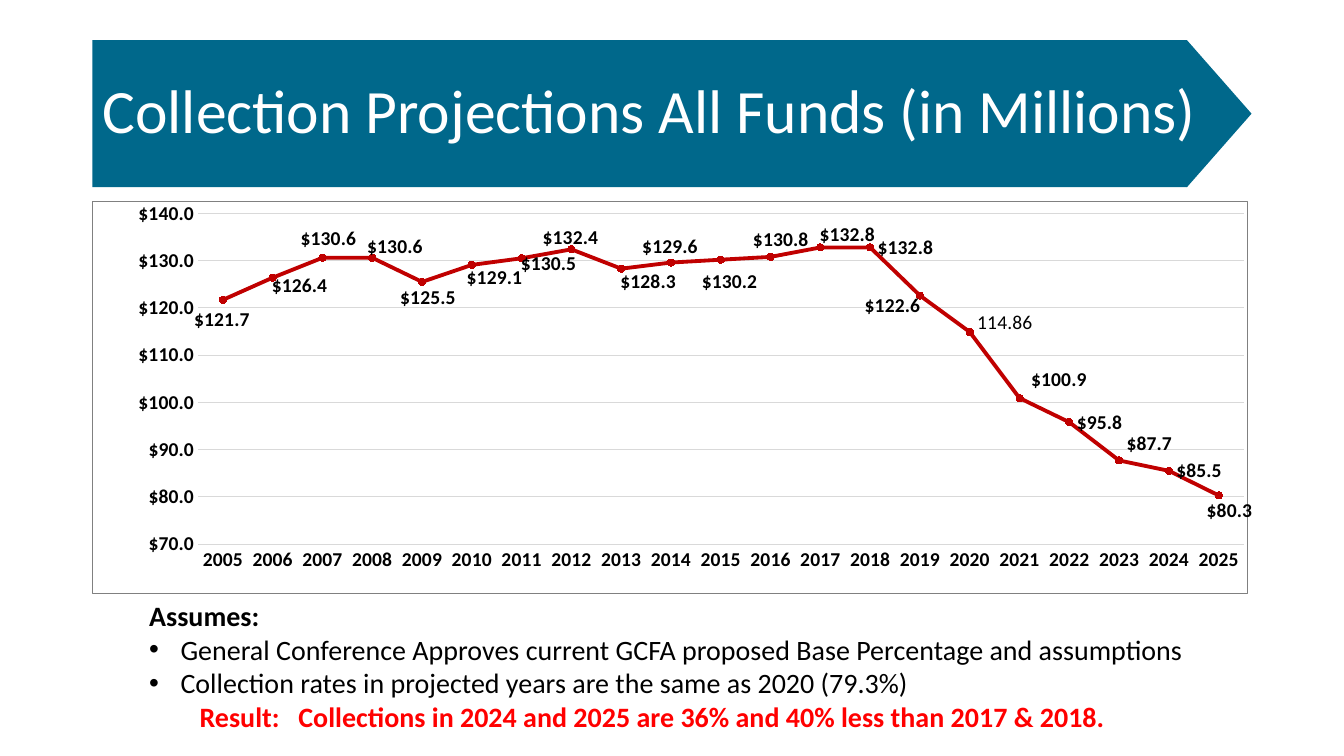
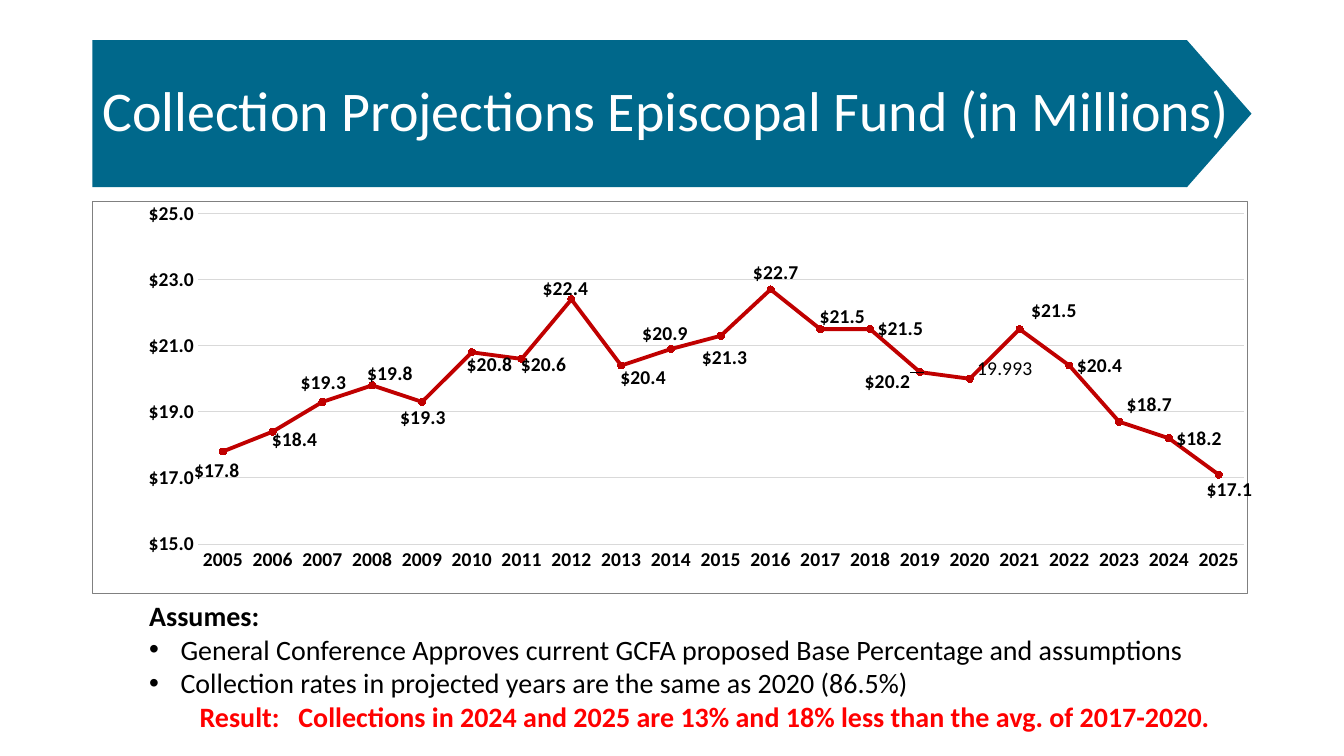
"""Build the two collection projection slides."""
import pptx
import pptx.chart.data
import pptx.dml.color
import pptx.enum.chart
import pptx.enum.shapes
import pptx.enum.text
import pptx.oxml
import pptx.oxml.ns
import pptx.util

Cm = pptx.util.Cm
Pt = pptx.util.Pt

COLORS = {"banner": "00688B", "paper": "FFFFFF", "ink": "000000", "collections": "C00000",
          "grid": "D9D9D9", "frame": "808080", "result": "FF0000"}
FONT = "Calibri"
LEFT, TOP, WIDTH = Cm(2.33), Cm(1.01), Cm(29.23)
CHART_WIDTH_PT, CHART_HEIGHT_PT = 828, 280
PLOT_PERCENT = {"x": 9.1, "y": 3.1, "w": 90.6, "h": 84.4}
YEARS = [str(year) for year in range(2005, 2026)]
DOLLARS = '"$"#,##0.0'
LABEL_SHIFTS_PT = {
    0: (-26, 14), 1: (-6, 6), 2: (-21, -14), 3: (-9, -8), 4: (-21, 11), 5: (-9, 9),
    6: (-6, 4), 7: (-26, -8), 8: (-6, 9), 9: (-26, -11), 10: (-19, 16), 11: (-18, -12),
    12: (-6, -9), 14: (-45, 7), 15: (0, -7), 16: (3, -13), 18: (0, -12), 20: (-14, 11),
}
PLAIN_YEAR = YEARS.index("2020")

PROJECTIONS = [
    {
        "title": "Collection Projections All Funds (in Millions)", "title_size": 44,
        "values": [121.7, 126.4, 130.6, 130.6, 125.5, 129.1, 130.5, 132.4, 128.3, 129.6, 130.2,
                   130.8, 132.8, 132.8, 122.6, 114.9, 100.9, 95.8, 87.7, 85.5, 80.3],
        "plain_label": "114.86",
        "scale": {"minimum_scale": 70, "maximum_scale": 140, "major_unit": 10},
        "rate": "79.3%",
        "result": "Collections in 2024 and 2025 are 36% and 40% less than 2017 & 2018.",
    },
    {
        "title": "Collection Projections Episcopal Fund (in Millions)", "title_size": 40,
        "values": [17.8, 18.4, 19.3, 19.8, 19.3, 20.8, 20.6, 22.4, 20.4, 20.9, 21.3,
                   22.7, 21.5, 21.5, 20.2, 20.0, 21.5, 20.4, 18.7, 18.2, 17.1],
        "plain_label": "19.993",
        "scale": {"minimum_scale": 15, "maximum_scale": 25, "major_unit": 2},
        "rate": "86.5%",
        "result": "Collections in 2024 and 2025 are 13% and 18% less than the avg. of 2017-2020.",
    },
]


def rgb(name):
    """Return the named colour."""
    return pptx.dml.color.RGBColor.from_string(COLORS[name])


def apply(target, **values):
    """Set each given attribute on the target."""
    for name, value in values.items():
        setattr(target, name, value)


def xml(body):
    """Parse a fragment with the chart and drawing namespaces."""
    tag, rest = body.split(">", 1)
    return pptx.oxml.parse_xml(f"{tag} {pptx.oxml.ns.nsdecls('c', 'a')}>{rest}")


class Deck:
    """Hold the shared style and the current slide."""

    def __init__(self):
        """Start an empty wide presentation."""
        self.presentation = pptx.Presentation()
        apply(self.presentation, slide_width=Cm(33.87), slide_height=Cm(19.05))
        self.slide = None

    def font(self, font, size, color="ink", bold=False):
        """Style a font."""
        apply(font, name=FONT, size=Pt(size), bold=bold)
        font.color.rgb = rgb(color)

    def line(self, line, color, width):
        """Style a line."""
        line.color.rgb = rgb(color)
        line.width = Pt(width)

    def add_slide(self, title, size):
        """Add a slide with its banner and title."""
        self.slide = self.presentation.slides.add_slide(self.presentation.slide_layouts[5])
        heading = self.slide.shapes.title
        kinds = pptx.enum.shapes.MSO_SHAPE
        for kind, box, turn in [
            (kinds.RECTANGLE, (LEFT, TOP, Cm(27.58), Cm(3.71)), 0),
            (kinds.ISOSCELES_TRIANGLE, (Cm(28.87), Cm(2.05), Cm(3.71), Cm(1.63)), 90),
        ]:
            banner = self.slide.shapes.add_shape(kind, *box)
            banner.rotation = turn
            banner.shadow.inherit = False
            banner.fill.solid()
            banner.fill.fore_color.rgb = rgb("banner")
            banner.line.fill.background()
            heading.element.addprevious(banner.element)
        apply(heading, left=LEFT, top=TOP, width=WIDTH, height=Cm(3.68))
        apply(heading.text_frame, text=title, word_wrap=True,
              auto_size=pptx.enum.text.MSO_AUTO_SIZE.NONE,
              vertical_anchor=pptx.enum.text.MSO_ANCHOR.MIDDLE)
        paragraph = heading.text_frame.paragraphs[0]
        apply(paragraph, alignment=pptx.enum.text.PP_ALIGN.LEFT, line_spacing=0.9)
        self.font(paragraph.runs[0].font, size, "paper")

    def add_projection(self, values, plain_label, scale):
        """Add the line chart of yearly collections."""
        data = pptx.chart.data.CategoryChartData(number_format=DOLLARS)
        data.categories = YEARS
        data.add_series("Series 1", values)
        chart = self.slide.shapes.add_chart(
            pptx.enum.chart.XL_CHART_TYPE.LINE_MARKERS, LEFT, Cm(5.06), WIDTH, Cm(9.9), data).chart
        apply(chart, has_legend=False, has_title=False)
        self.font(chart.font, 10, bold=True)
        chart.plots[0].vary_by_categories = False
        self.frame(chart)
        self.axes(chart, scale)
        series = chart.plots[0].series[0]
        series.smooth = False
        self.line(series.format.line, "collections", 2.75)
        apply(series.marker, style=pptx.enum.chart.XL_MARKER_STYLE.CIRCLE, size=5)
        series.marker.format.fill.solid()
        series.marker.format.fill.fore_color.rgb = rgb("collections")
        self.line(series.marker.format.line, "collections", 0.75)
        self.labels(chart, series, plain_label)

    def frame(self, chart):
        """Fill and outline the chart area and place its plot."""
        chart.element.find(pptx.oxml.ns.qn("c:chart")).addnext(xml(
            f'<c:spPr><a:solidFill><a:srgbClr val="{COLORS["paper"]}"/></a:solidFill>'
            f'<a:ln w="{Pt(0.75)}"><a:solidFill><a:srgbClr val="{COLORS["frame"]}"/>'
            '</a:solidFill></a:ln></c:spPr>'))
        plot_area = chart.element.xpath(".//c:plotArea")[0]
        for layout in plot_area.findall(pptx.oxml.ns.qn("c:layout")):
            plot_area.remove(layout)
        sizes = "".join(f'<c:{side} val="{share / 100:.3f}"/>' for side, share in PLOT_PERCENT.items())
        plot_area.insert(0, xml(
            '<c:layout><c:manualLayout><c:layoutTarget val="inner"/><c:xMode val="edge"/>'
            f'<c:yMode val="edge"/>{sizes}</c:manualLayout></c:layout>'))

    def axes(self, chart, scale):
        """Style both axes and the grid."""
        no_tick = pptx.enum.chart.XL_TICK_MARK.NONE
        for axis in (chart.category_axis, chart.value_axis):
            apply(axis, major_tick_mark=no_tick, minor_tick_mark=no_tick)
            self.font(axis.tick_labels.font, 14, bold=True)
        self.line(chart.category_axis.format.line, "grid", 0.75)
        amounts = chart.value_axis
        apply(amounts, has_major_gridlines=True, **scale)
        apply(amounts.tick_labels, number_format=DOLLARS, number_format_is_linked=False)
        amounts.format.line.fill.background()
        self.line(amounts.major_gridlines.format.line, "grid", 0.75)

    def labels(self, chart, series, plain_label):
        """Show the values and shift the crowded ones."""
        right = pptx.enum.chart.XL_LABEL_POSITION.RIGHT
        apply(series.data_labels, show_value=True, position=right,
              number_format=DOLLARS, number_format_is_linked=False)
        self.font(series.data_labels.font, 14, bold=True)
        for index in LABEL_SHIFTS_PT:
            label = series.points[index].data_label
            if index == PLAIN_YEAR:
                label.text_frame.text = plain_label
                self.font(label.text_frame.paragraphs[0].runs[0].font, 14)
            else:
                self.font(label.font, 14, bold=True)
            label.position = right
        for element, (across, down) in zip(chart.element.xpath(".//c:dLbl"), LABEL_SHIFTS_PT.values()):
            element.find(pptx.oxml.ns.qn("c:idx")).addnext(xml(
                f'<c:layout><c:manualLayout><c:x val="{across / CHART_WIDTH_PT:.4f}"/>'
                f'<c:y val="{down / CHART_HEIGHT_PT:.4f}"/></c:manualLayout></c:layout>'))

    def add_assumptions(self, rate, result):
        """Add the assumptions and the result below the chart."""
        frame = self.slide.shapes.add_textbox(Cm(3.51), Cm(14.96), Cm(28.3), Cm(3.68)).text_frame
        apply(frame, word_wrap=True, auto_size=pptx.enum.text.MSO_AUTO_SIZE.SHAPE_TO_FIT_TEXT)
        bullet = {"margin": 0.79, "indent": -0.79, "bullet": True}
        lines = [
            ("Assumes:", {}, {"bold": True}),
            ("General Conference Approves current GCFA proposed Base Percentage and assumptions", bullet, {}),
            (f"Collection rates in projected years are the same as 2020 ({rate})", bullet, {}),
            (f"Result:\t{result}", {"margin": 3.76, "indent": -2.49}, {"color": "result", "bold": True}),
        ]
        for number, (text, indents, look) in enumerate(lines):
            paragraph = frame.add_paragraph() if number else frame.paragraphs[0]
            self.indent(paragraph, **indents)
            run = paragraph.add_run()
            run.text = text
            self.font(run.font, 20, **look)

    def indent(self, paragraph, margin=0, indent=0, bullet=False):
        """Set the indents and bullet of a paragraph."""
        properties = paragraph._p.get_or_add_pPr()
        properties.set("marL", str(Cm(margin)))
        properties.set("indent", str(Cm(indent)))
        if bullet:
            properties.append(xml('<a:buFont typeface="Arial"></a:buFont>'))
            properties.append(xml('<a:buChar char="•"></a:buChar>'))


def main():
    """Build and save the slides."""
    deck = Deck()
    for projection in PROJECTIONS:
        deck.add_slide(projection["title"], projection["title_size"])
        deck.add_projection(projection["values"], projection["plain_label"], projection["scale"])
        deck.add_assumptions(projection["rate"], projection["result"])
    deck.presentation.save("out.pptx")


if __name__ == "__main__":
    main()
